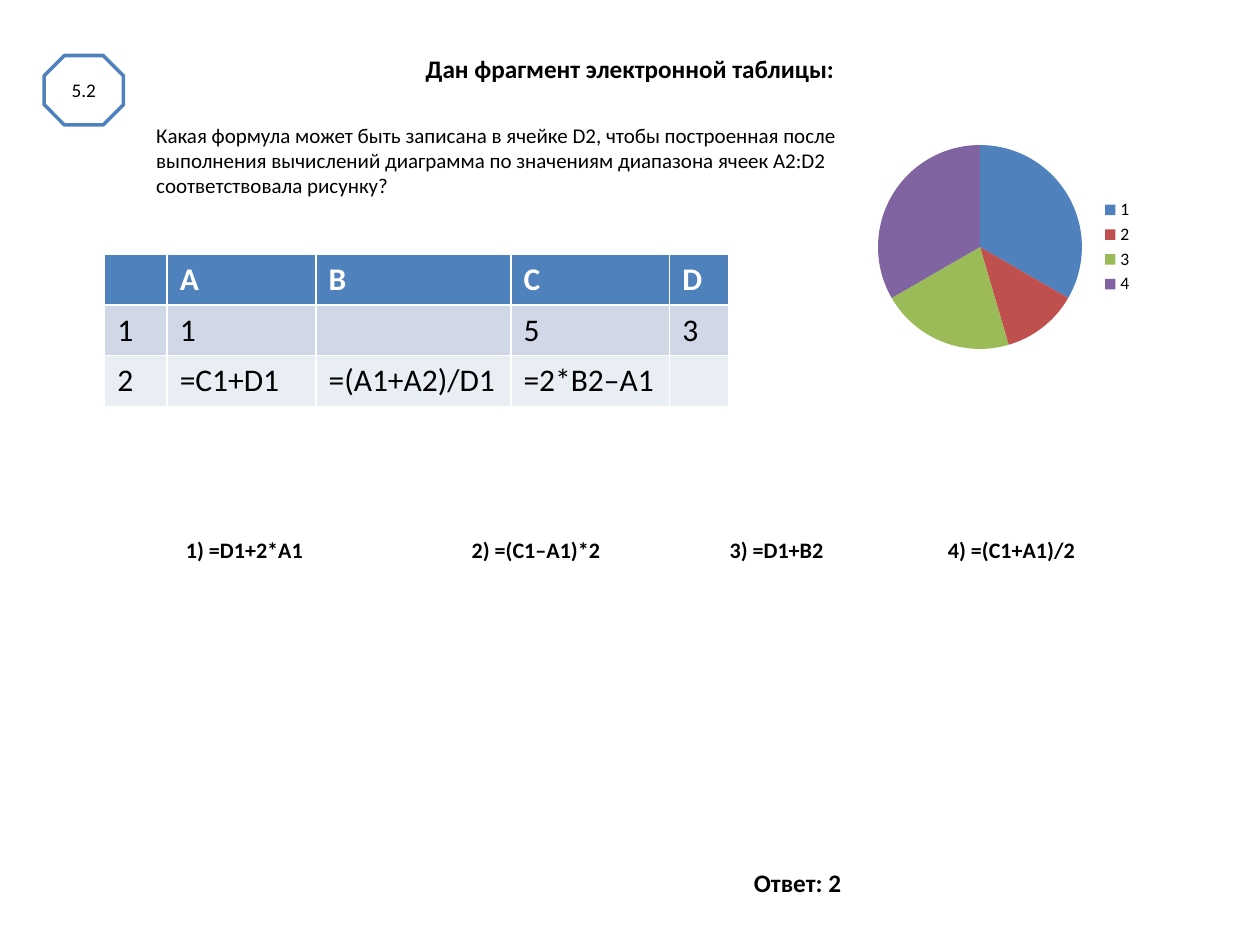
from dataclasses import dataclass

from pptx import Presentation
from pptx.chart.data import CategoryChartData
from pptx.dml.color import RGBColor
from pptx.enum.chart import XL_CHART_TYPE, XL_LEGEND_POSITION
from pptx.enum.shapes import MSO_SHAPE
from pptx.enum.text import MSO_ANCHOR, PP_ALIGN
from pptx.util import Cm, Pt


@dataclass(frozen=True)
class Theme:
    font: str = "Calibri"
    black: str = "000000"
    white: str = "FFFFFF"
    blue: str = "4F81BD"
    bands: tuple = ("D0D8E8", "E9EDF4")
    slices: tuple = ("4F81BD", "C0504D", "9BBB59", "8064A2")
    title_size: float = 14.4
    option_size: float = 12.6
    question_size: float = 12
    table_size: float = 18
    badge_size: float = 11
    chart_size: float = 10


THEME = Theme()

QUESTION = (
    "Какая формула может быть записана в ячейке D2, чтобы построенная после "
    "выполнения вычислений диаграмма по значениям диапазона ячеек A2:D2 "
    "соответствовала рисунку?"
)
SHEET_ROWS = (
    ("", "A", "B", "C", "D"),
    ("1", "1", "", "5", "3"),
    ("2", "=C1+D1", "=(A1+A2)/D1", "=2*B2–A1", ""),
)
COLUMN_WIDTHS = (1.26, 3, 3.93, 3.2, 1.2)
ROW_HEIGHT = 1.02
PIE_VALUES = (33, 12, 21, 33)
# Answer options with their left edges in centimetres
OPTIONS = (
    ("1) =D1+2*A1", 3.75),
    ("2) =(C1–A1)*2", 9.51),
    ("3) =D1+B2", 14.71),
    ("4) =(C1+A1)/2", 19.11),
)


def style_font(font, size, color=THEME.black, bold=False):
    font.name = THEME.font
    font.size = Pt(size)
    font.bold = bold
    font.color.rgb = RGBColor.from_string(color)


def fill_solid(fill, color):
    fill.solid()
    fill.fore_color.rgb = RGBColor.from_string(color)


def write_text(shape, text, size, bold=False, align=PP_ALIGN.LEFT,
               anchor=MSO_ANCHOR.MIDDLE):
    frame = shape.text_frame
    frame.word_wrap = True
    frame.vertical_anchor = anchor
    frame.text = text
    paragraph = frame.paragraphs[0]
    paragraph.alignment = align
    style_font(paragraph.font, size, bold=bold)


def place_title(slide, text):
    title = slide.shapes.title
    title.left, title.top, title.width, title.height = Cm(1.27), Cm(0.87), Cm(22.86), Cm(1)
    write_text(title, text, THEME.title_size, bold=True, align=PP_ALIGN.CENTER)


def add_label(slide, text, left, top, size):
    """Add a short bold line whose text starts exactly at left."""
    label = slide.shapes.add_textbox(Cm(left), Cm(top), Cm(4), Cm(0.8))
    label.text_frame.margin_left = 0
    write_text(label, text, size, bold=True)


def add_question(slide, text):
    box = slide.shapes.add_textbox(Cm(2.9), Cm(2.34), Cm(14.4), Cm(1.8))
    write_text(box, text, THEME.question_size, anchor=MSO_ANCHOR.TOP)


def add_badge(slide, text):
    badge = slide.shapes.add_shape(MSO_SHAPE.OCTAGON, Cm(0.89), Cm(1.12), Cm(1.6), Cm(1.4))
    badge.shadow.inherit = False
    fill_solid(badge.fill, THEME.white)
    badge.line.color.rgb = RGBColor.from_string(THEME.blue)
    badge.line.width = Pt(2)
    frame = badge.text_frame
    frame.margin_left = frame.margin_right = 0
    write_text(badge, text, THEME.badge_size, align=PP_ALIGN.CENTER)


def add_sheet(slide, rows):
    table = slide.shapes.add_table(
        len(rows), len(COLUMN_WIDTHS), Cm(2.11), Cm(5.13),
        Cm(sum(COLUMN_WIDTHS)), Cm(ROW_HEIGHT * len(rows)),
    ).table
    for column, width in zip(table.columns, COLUMN_WIDTHS):
        column.width = Cm(width)
    for row_index, values in enumerate(rows):
        header = row_index == 0
        background = THEME.blue if header else THEME.bands[row_index - 1]
        color = THEME.white if header else THEME.black
        for column_index, value in enumerate(values):
            cell = table.cell(row_index, column_index)
            cell.text = value
            fill_solid(cell.fill, background)
            style_font(cell.text_frame.paragraphs[0].font, THEME.table_size, color, header)


def add_pie(slide, values):
    data = CategoryChartData()
    data.categories = [str(number) for number in range(1, len(values) + 1)]
    data.add_series("Series 1", values)
    chart = slide.shapes.add_chart(
        XL_CHART_TYPE.PIE, Cm(17.35), Cm(2.11), Cm(5.74), Cm(5.74), data
    ).chart
    chart.has_title = False
    style_font(chart.font, THEME.chart_size)
    chart.has_legend = True
    chart.legend.position = XL_LEGEND_POSITION.RIGHT
    chart.legend.include_in_layout = False
    plot = chart.plots[0]
    plot.vary_by_categories = True
    for index, color in enumerate(THEME.slices):
        fill_solid(plot.series[0].points[index].format.fill, color)


def main():
    presentation = Presentation()
    presentation.slide_width, presentation.slide_height = Cm(25.4), Cm(19.05)
    slide = presentation.slides.add_slide(presentation.slide_layouts[5])

    # Task heading and statement
    place_title(slide, "Дан фрагмент электронной таблицы:")
    add_badge(slide, "5.2")
    add_question(slide, QUESTION)

    # Spreadsheet fragment and its diagram
    add_sheet(slide, SHEET_ROWS)
    add_pie(slide, PIE_VALUES)

    # Answer options and the answer
    for text, left in OPTIONS:
        add_label(slide, text, left, 10.69, THEME.option_size)
    add_label(slide, "Ответ: 2", 15.2, 17.38, THEME.title_size)

    presentation.save("out.pptx")


if __name__ == "__main__":
    main()
